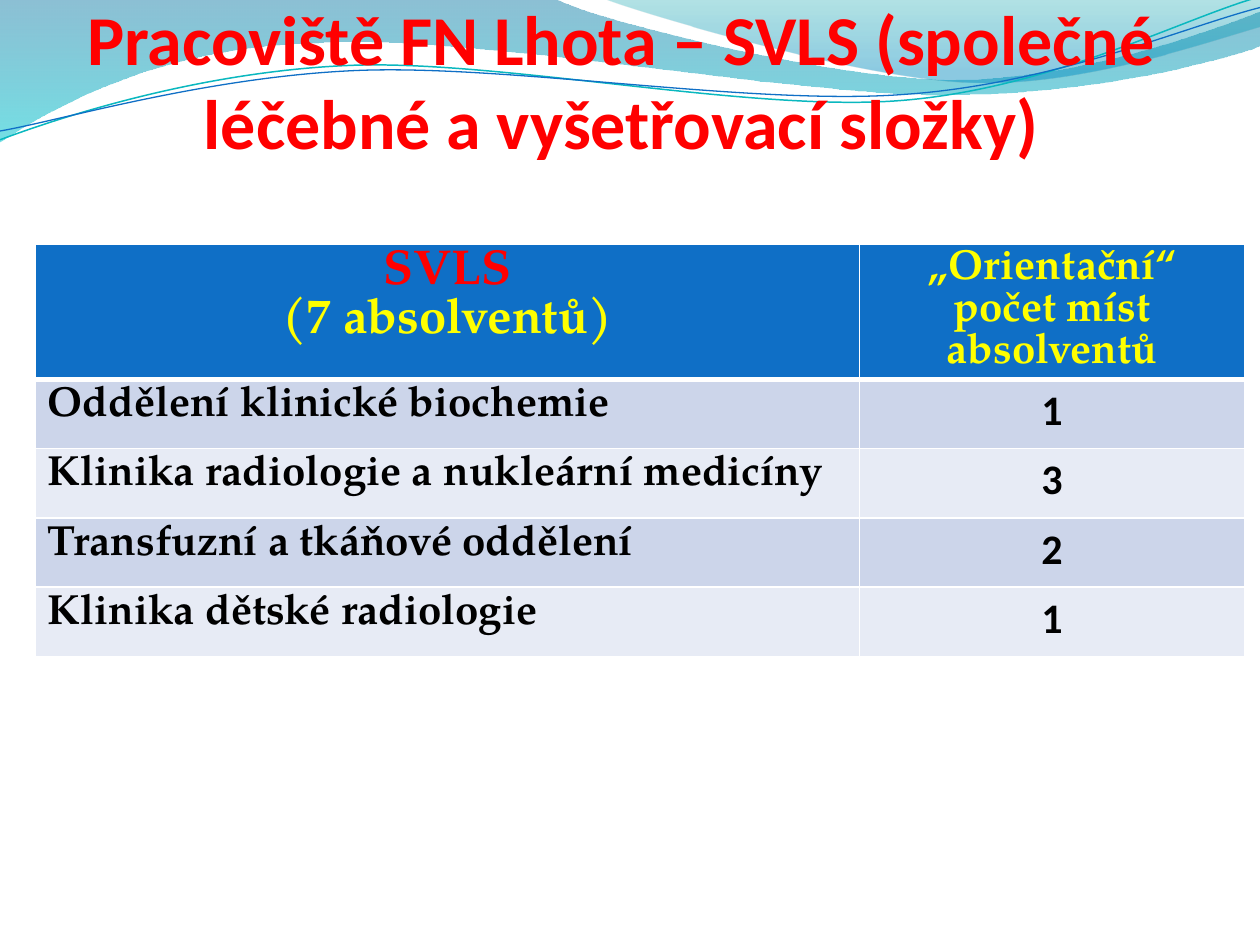
from lxml.etree import SubElement
from pptx import Presentation
from pptx.dml.color import RGBColor
from pptx.enum.text import MSO_ANCHOR, PP_ALIGN
from pptx.oxml.ns import qn
from pptx.util import Inches, Pt

RED, YELLOW, BLACK, WHITE, BLUE = "FF0000", "FFFF00", "000000", "FFFFFF", "0F6FC6"
BANDS = ["CCD5EA", "E7EBF5"]
SANS, SERIF = "Calibri", "TeX Gyre Pagella"


def rgb(value):
    return RGBColor.from_string(value)


def set_all(obj, **values):
    for name, value in values.items():
        setattr(obj, name, value)


class SlideBuilder:
    def __init__(self, slide):
        self.slide = slide

    def freeform(self, start, parts, closed):
        """Draw an outline of lines (2 numbers) and cubic curves (6 numbers)."""
        points = [tuple(map(Inches, part[i:i + 2]))
                  for part in parts for i in range(0, len(part), 2)]
        builder = self.slide.shapes.build_freeform(*map(Inches, start))
        builder.add_line_segments(points, close=closed)
        sp = builder.convert_to_shape()
        sp.shadow.inherit = False
        segments = iter(list(sp._element.iter(qn("a:lnTo"))))
        for part in parts:
            curve = next(segments)
            if len(part) == 6:
                controls = [next(segments)[0], next(segments)[0]]
                bezier = curve.makeelement(qn("a:cubicBezTo"))
                curve.addprevious(bezier)
                outline = curve.getparent()
                bezier.append(curve[0])
                outline.remove(curve)
                for control in controls:
                    outline.remove(control.getparent())
                    bezier.append(control)
        return sp

    def wave(self, start, parts, stops):
        sp = self.freeform(start, parts, True)
        sp.line.fill.background()
        sp.fill.gradient()
        sp.fill.gradient_angle = 270
        for stop, (position, color, opacity) in zip(sp.fill.gradient_stops, stops):
            stop.position = position
            stop.color.rgb = rgb(color)
            node = stop.color._xFill.find(qn("a:srgbClr"))
            SubElement(node, qn("a:alpha"), val=str(opacity * 1000))

    def strand(self, start, parts, color, width):
        sp = self.freeform(start, parts, False)
        sp.fill.background()
        sp.line.color.rgb = rgb(color)
        sp.line.width = Pt(width)

    def paragraph(self, p, text, font, size, color, align, spacing=None):
        set_all(p, alignment=align, line_spacing=spacing)
        r = p.add_run()
        r.text = text
        set_all(r.font, name=font, size=Pt(size), bold=True)
        r.font.color.rgb = rgb(color)

    def title(self, text, left, top, width, height):
        box = self.slide.shapes.add_textbox(*map(Inches, (left, top, width, height)))
        tf = box.text_frame
        set_all(tf, word_wrap=True, vertical_anchor=MSO_ANCHOR.BOTTOM, margin_left=0,
                margin_right=0, margin_top=Inches(0.05), margin_bottom=0)
        self.paragraph(tf.paragraphs[0], text, SANS, 40, RED, PP_ALIGN.CENTER)

    def border(self, cell, side, width):
        ln = SubElement(cell._tc.get_or_add_tcPr(), qn(f"a:ln{side}"), w=str(Pt(width)))
        fill = SubElement(ln, qn("a:solidFill"))
        SubElement(fill, qn("a:srgbClr"), val=WHITE)

    def cell(self, cell, fill, lines, edges, margin_top=0.05):
        set_all(cell, vertical_anchor=MSO_ANCHOR.TOP, margin_left=Inches(0.1),
                margin_right=Inches(0.1), margin_top=Inches(margin_top), margin_bottom=0)
        for side, width in edges.items():
            self.border(cell, side, width)
        cell.fill.solid()
        cell.fill.fore_color.rgb = rgb(fill)
        tf = cell.text_frame
        for i, line in enumerate(lines):
            p = tf.add_paragraph() if i else tf.paragraphs[0]
            self.paragraph(p, *line)

    def table(self, left, top, widths, heights):
        frame = self.slide.shapes.add_table(
            len(heights), len(widths), Inches(left), Inches(top),
            Inches(sum(widths)), Inches(sum(heights)))
        for column, width in zip(frame.table.columns, widths):
            column.width = Inches(width)
        for row, height in zip(frame.table.rows, heights):
            row.height = Inches(height)
        return frame.table


def main():
    prs = Presentation()
    prs.slide_width, prs.slide_height = Inches(10), Inches(7.5)
    s = SlideBuilder(prs.slides.add_slide(prs.slide_layouts[6]))

    # Waves along the top edge
    s.wave((0, 0),
           [(4.4, -0.01), (4.76, 0.17, 6.64, 0.63, 7.58, 0.63),
            (8.53, 0.63, 9.58, 0.26, 10, 0.09), (10.01, 0.36),
            (9.83, 0.44, 8.7, 0.76, 7.46, 0.75), (6.22, 0.75, 3.82, 0.28, 2.57, 0.34),
            (1.29, 0.36, 0.46, 0.83, -0.01, 1.13)],
           [(0, "0074A1", 45), (1, "00C6CF", 55)])
    s.wave((4.79, -0.01),
           [(5.09, 0.11, 6.82, 0.62, 7.69, 0.65), (8.56, 0.69, 9.61, 0.32, 10, 0.21),
            (10, 0)],
           [(0, "00A1A9", 30), (0.8, "008BBF", 45)])

    # Thin strands across the waves
    s.strand((0, 1.11),
             [(0.48, 0.93, 1.58, 0.57, 2.77, 0.52), (3.95, 0.47, 5.93, 0.89, 7.13, 0.8),
              (8.33, 0.71, 9.38, 0.15, 9.98, -0.02)], "0AB8BF", 0.85)
    s.strand((0, 1.04),
             [(0.47, 0.96, 1.64, 0.61, 2.83, 0.56), (4.03, 0.51, 5.97, 0.84, 7.17, 0.75),
              (8.36, 0.67, 9.41, 0.21, 10, 0.06)], BLUE, 0.75)

    # Title
    s.title("Pracoviště FN Lhota – SVLS (společné léčebné a vyšetřovací složky)",
            0.35, 0.17, 9.16, 1.13)

    # Table header
    departments = [("Oddělení klinické biochemie", 1),
                   ("Klinika radiologie a nukleární medicíny", 3),
                   ("Transfuzní a tkáňové oddělení", 2),
                   ("Klinika dětské radiologie", 1)]
    table = s.table(0.28, 1.94, [6.54, 3.06], [1.07] + [0.55] * len(departments))
    center, left = PP_ALIGN.CENTER, PP_ALIGN.LEFT
    edges = {"L": 1, "R": 1, "T": 1, "B": 3}
    s.cell(table.cell(0, 0), BLUE,
           [("SVLS", SERIF, 28, RED, center, Pt(28)),
            ("(7 absolventů)", SERIF, 28, YELLOW, center, Pt(28))], edges, 0.03)
    s.cell(table.cell(0, 1), BLUE,
           [("„Orientační“ počet míst absolventů", SERIF, 24, YELLOW, center, Pt(24))],
           edges, 0.03)

    # Table body
    for i, (name, places) in enumerate(departments):
        fill = BANDS[i % 2]
        edges = {"L": 1, "R": 1, "T": 1 if i else 3, "B": 1}
        s.cell(table.cell(i + 1, 0), fill, [(name, SERIF, 24, BLACK, left, Pt(24))], edges)
        s.cell(table.cell(i + 1, 1), fill, [(str(places), SANS, 24, BLACK, center)], edges)

    prs.save("out.pptx")


if __name__ == "__main__":
    main()
